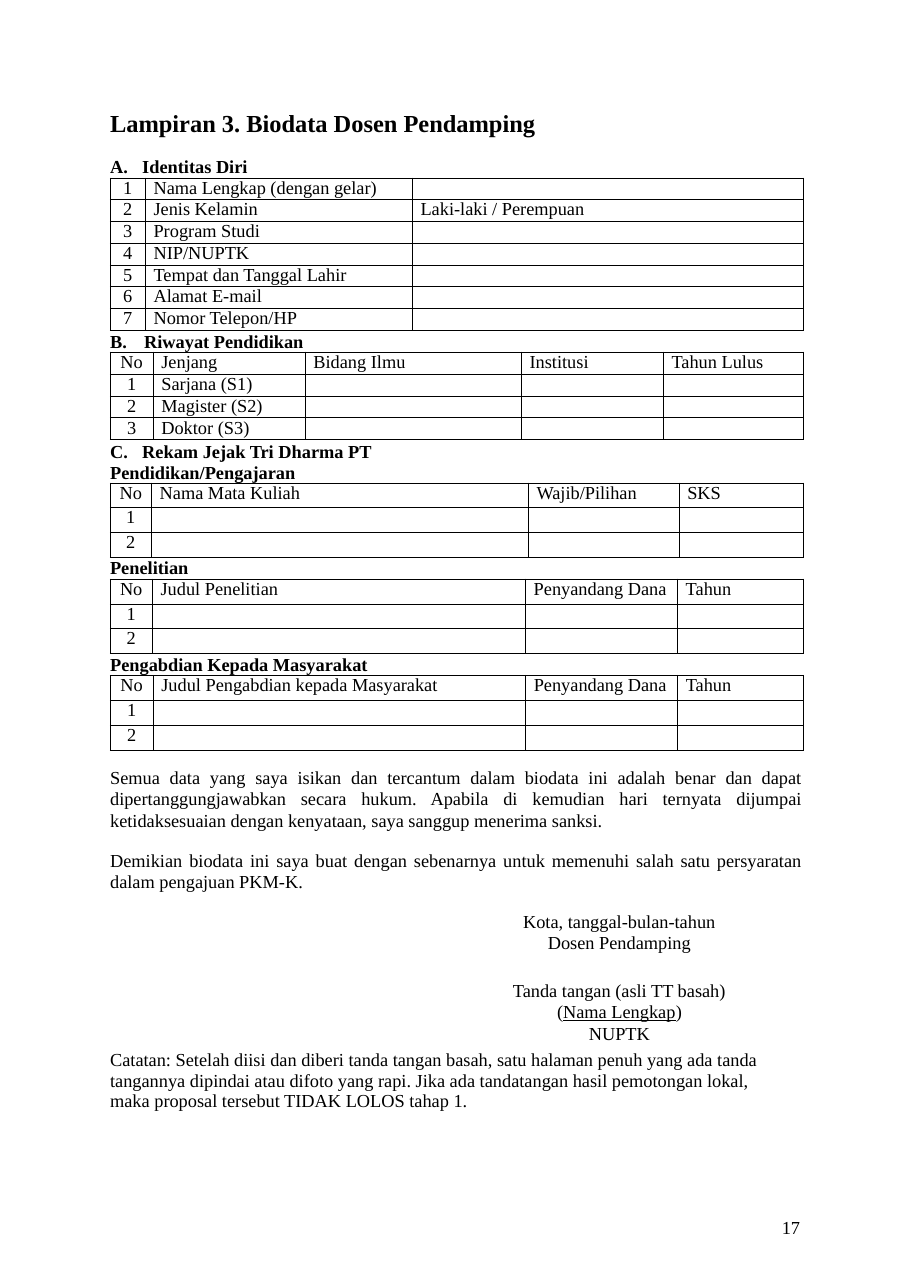
"""Build the biodata form page for an accompanying lecturer."""
from dataclasses import dataclass

from lxml.etree import SubElement
from pptx import Presentation
from pptx.dml.color import RGBColor
from pptx.enum.text import PP_ALIGN as Align
from pptx.oxml.ns import qn
from pptx.util import Pt


@dataclass(frozen=True)
class Theme:
    """Colours and type sizes."""
    font: str = "Times New Roman"
    ink: RGBColor = RGBColor(0, 0, 0)
    title: float = 16
    body: float = 12
    empty: float = 10
    rule: float = 0.5


@dataclass(frozen=True)
class Line:
    """A paragraph; underlined text may be enclosed by a prefix and suffix."""
    text: str
    size: float = 12
    bold: bool = False
    align: Align = Align.LEFT
    leading: float | None = None
    before: float = 0
    left: float = 0
    right: float = 0
    hanging: float = 0
    underlined: str = ""
    suffix: str = ""


@dataclass(frozen=True)
class Block:
    """A text block."""
    left: float
    top: float
    width: float
    height: float
    lines: list[Line]


@dataclass(frozen=True)
class Form:
    """A ruled form table."""
    top: float
    widths: list[float]
    row_height: float
    rows: list[list[str]]


THEME = Theme()
MARGIN = 72
PAGE_WIDTH, PAGE_HEIGHT = 595, 842.5
CELL_LEADING = 13.2
CELL_INDENT = 5.4


def heading(text: str, **layout: float) -> Line:
    """Return a bold section heading."""
    return Line(text, THEME.body, True, **layout)


def signature(text: str, before: float = 0, **parts: str) -> Line:
    """Return a centred line of the signature block."""
    return Line(text, THEME.body, False, Align.CENTER, 13.8, before, 252, 39, **parts)


def numbered(header: list[str], count: int) -> list[list[str]]:
    """Return a header row followed by numbered empty rows."""
    return [header] + [[str(n)] + [""] * (len(header) - 1) for n in range(1, count + 1)]


IDENTITY = ["Nama Lengkap (dengan gelar)", "Jenis Kelamin", "Program Studi", "NIP/NUPTK",
            "Tempat dan Tanggal Lahir", "Alamat E-mail", "Nomor Telepon/HP"]
DEGREES = ["Sarjana (S1)", "Magister (S2)", "Doktor (S3)"]

FORMS = [
    Form(116.4, [23, 174.6, 255.9], 14.25,
         [[str(n), label, "Laki-laki / Perempuan" if label == "Jenis Kelamin" else ""]
          for n, label in enumerate(IDENTITY, 1)]),
    Form(230.3, [28.1, 99.4, 141.4, 92.8, 91.8], 14.35,
         [["No", "Jenjang", "Bidang Ilmu", "Institusi", "Tahun Lulus"]]
         + [[str(n), degree, "", "", ""] for n, degree in enumerate(DEGREES, 1)]),
    Form(315.9, [27, 246.4, 98.6, 81.5], 16.15,
         numbered(["No", "Nama Mata Kuliah", "Wajib/Pilihan", "SKS"], 2)),
    Form(378.7, [27.6, 244, 99.4, 82.5], 16.3,
         numbered(["No", "Judul Penelitian", "Penyandang Dana", "Tahun"], 2)),
    Form(441.6, [28.1, 243.5, 99.4, 82.5], 16.3,
         numbered(["No", "Judul Pengabdian kepada Masyarakat", "Penyandang Dana", "Tahun"], 2)),
]

BLOCKS = [
    Block(MARGIN, 70.8, 320, 46, [
        Line("Lampiran 3. Biodata Dosen Pendamping", THEME.title, True),
        heading("A.\tIdentitas Diri", before=11.8, left=21, hanging=21)]),
    Block(MARGIN, 215.8, 200, 14, [
        heading("B.\tRiwayat Pendidikan", left=22.3, hanging=22.3)]),
    Block(MARGIN, 288.7, 250, 28, [
        heading("C.\tRekam Jejak Tri Dharma PT", left=21, hanging=21, leading=13.8),
        heading("Pendidikan/Pengajaran", leading=13.8)]),
    Block(MARGIN, 364.1, 200, 14, [heading("Penelitian")]),
    Block(MARGIN, 427.4, 250, 14, [heading("Pengabdian Kepada Masyarakat")]),
    Block(MARGIN, 501.5, 453, 226, [
        Line("Semua data yang saya isikan dan tercantum dalam biodata ini adalah benar dan dapat "
             "dipertanggungjawabkan secara hukum. Apabila di kemudian hari ternyata dijumpai "
             "ketidaksesuaian dengan kenyataan, saya sanggup menerima sanksi.",
             align=Align.JUSTIFY, leading=14),
        Line("Demikian biodata ini saya buat dengan sebenarnya untuk memenuhi salah satu "
             "persyaratan dalam pengajuan PKM-K.",
             align=Align.JUSTIFY, leading=13.8, before=12.4),
        signature("Kota, tanggal-bulan-tahun", 12.4),
        signature("Dosen Pendamping"),
        signature("Tanda tangan (asli TT basah)", 17.3),
        signature("(", underlined="Nama Lengkap", suffix=")"),
        signature("NUPTK", 0.9),
        Line("Catatan: Setelah diisi dan diberi tanda tangan basah, satu halaman penuh yang ada "
             "tanda tangannya dipindai atau difoto yang rapi. Jika ada tandatangan hasil "
             "pemotongan lokal, maka proposal tersebut TIDAK LOLOS tahap 1.",
             leading=13.5, before=3.5, right=21)]),
    Block(511.2, 795.6, 17, 15, [Line("17", leading=14.2)]),
]


def write_line(paragraph, line: Line) -> None:
    """Fill and format one paragraph."""
    paragraph.text = line.text
    if line.underlined:
        paragraph.add_run().text = line.underlined
        paragraph.runs[-1].font.underline = True
        paragraph.add_run().text = line.suffix
    properties = paragraph._p.get_or_add_pPr()
    properties.set("marL", str(Pt(line.left)))
    properties.set("marR", str(Pt(line.right)))
    properties.set("indent", str(Pt(-line.hanging)))
    paragraph.alignment = line.align
    if line.leading:
        paragraph.line_spacing = Pt(line.leading)
    if line.before:
        paragraph.space_before = Pt(line.before)
    for run in paragraph.runs:
        run.font.name = THEME.font
        run.font.size = Pt(line.size)
        run.font.bold = line.bold
        run.font.color.rgb = THEME.ink
    if not line.text:
        ending = SubElement(paragraph._p, qn("a:endParaRPr"), sz=str(int(line.size * 100)))
        SubElement(ending, qn("a:latin"), typeface=THEME.font)


def draw_block(slide, block: Block) -> None:
    """Draw a text block without insets."""
    frame = slide.shapes.add_textbox(
        Pt(block.left), Pt(block.top), Pt(block.width), Pt(block.height)).text_frame
    frame.word_wrap = True
    frame.margin_left = frame.margin_right = frame.margin_top = frame.margin_bottom = 0
    for index, line in enumerate(block.lines):
        write_line(frame.add_paragraph() if index else frame.paragraphs[0], line)


def rule_cell(cell) -> None:
    """Draw thin rules on all four sides of a cell."""
    properties = cell._tc.get_or_add_tcPr()
    for position, side in enumerate(("a:lnL", "a:lnR", "a:lnT", "a:lnB")):
        rule = properties.makeelement(qn(side), {"w": str(Pt(THEME.rule))})
        fill = SubElement(rule, qn("a:solidFill"))
        SubElement(fill, qn("a:srgbClr"), val=str(THEME.ink))
        properties.insert(position, rule)


def draw_form(slide, form: Form) -> None:
    """Draw a form table with a centred first column."""
    table = slide.shapes.add_table(
        len(form.rows), len(form.widths), Pt(MARGIN), Pt(form.top),
        Pt(sum(form.widths)), Pt(form.row_height * len(form.rows))).table
    table.first_row = table.horz_banding = False
    for column, width in zip(table.columns, form.widths):
        column.width = Pt(width)
    for row, texts in zip(table.rows, form.rows):
        row.height = Pt(form.row_height)
        for index, (cell, text) in enumerate(zip(row.cells, texts)):
            cell.margin_left = cell.margin_right = cell.margin_top = cell.margin_bottom = 0
            cell.fill.background()
            rule_cell(cell)
            write_line(cell.text_frame.paragraphs[0], Line(
                text, THEME.body if text else THEME.empty,
                align=Align.LEFT if index else Align.CENTER,
                leading=CELL_LEADING, left=CELL_INDENT if index else 0))


def main() -> None:
    """Build and save the page."""
    deck = Presentation()
    deck.slide_width = Pt(PAGE_WIDTH)
    deck.slide_height = Pt(PAGE_HEIGHT)
    slide = deck.slides.add_slide(deck.slide_layouts[6])
    for form in FORMS:
        draw_form(slide, form)
    for block in BLOCKS:
        draw_block(slide, block)
    deck.save("out.pptx")


if __name__ == "__main__":
    main()
